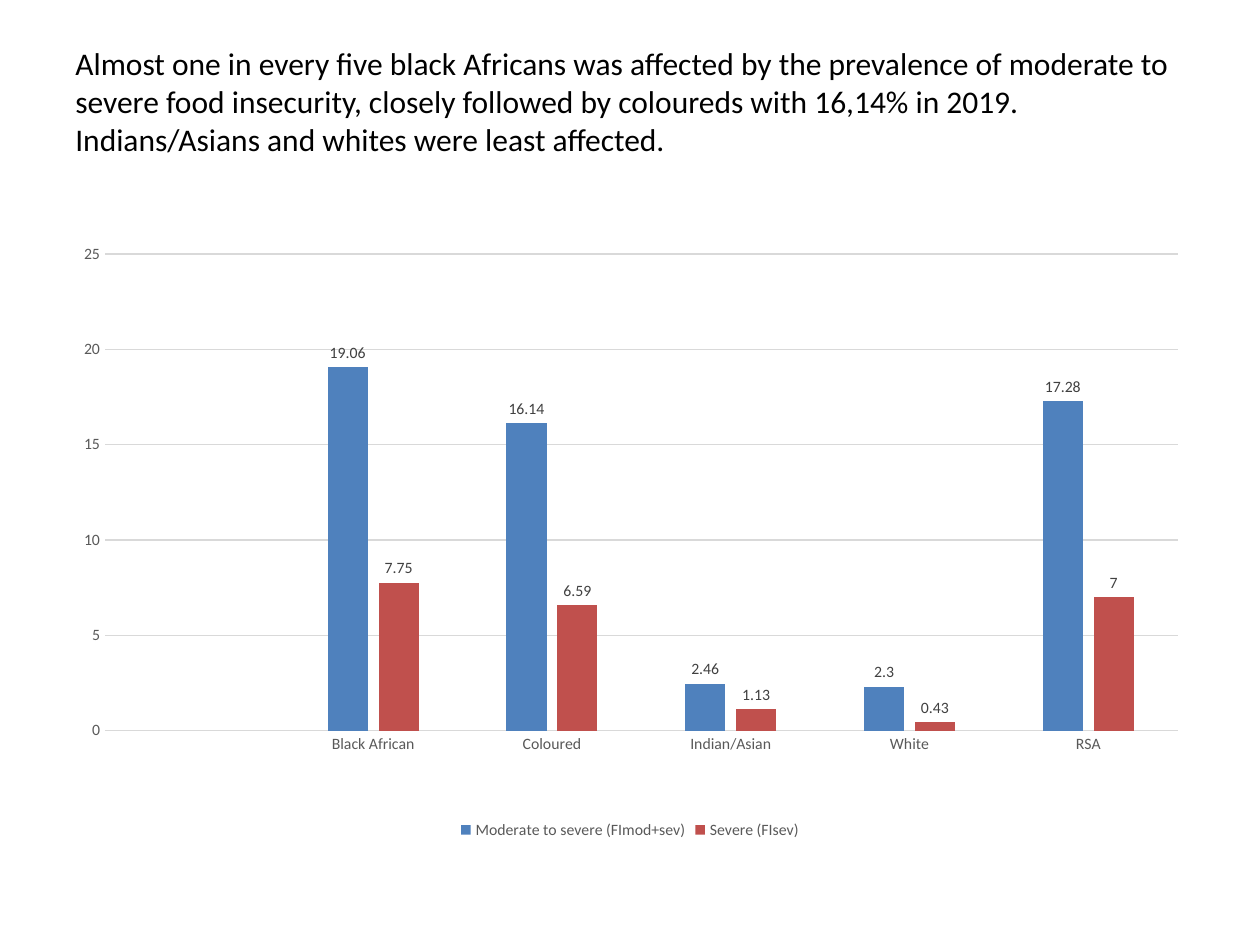
"""Build a slide charting food insecurity by population group."""

from dataclasses import dataclass

from lxml import etree
from pptx import Presentation
from pptx.chart.chart import Chart
from pptx.chart.data import CategoryChartData
from pptx.dml.color import RGBColor
from pptx.enum.chart import XL_CHART_TYPE, XL_LABEL_POSITION, XL_LEGEND_POSITION, XL_TICK_MARK
from pptx.enum.text import MSO_ANCHOR
from pptx.oxml.ns import qn
from pptx.slide import Slide
from pptx.text.text import Font
from pptx.util import Pt

CLUSTERED = XL_CHART_TYPE.COLUMN_CLUSTERED
OUTSIDE_END = XL_LABEL_POSITION.OUTSIDE_END
BOTTOM = XL_LEGEND_POSITION.BOTTOM
NO_TICK = XL_TICK_MARK.NONE
TOP = MSO_ANCHOR.TOP


@dataclass(frozen=True)
class Theme:
    """Colours, typeface and type sizes."""

    face: str = "Calibri"
    ink: str = "000000"
    axis_text: str = "595959"
    label_text: str = "404040"
    rule: str = "D9D9D9"
    title_size: float = 18
    chart_size: float = 10
    small_size: float = 9
    rule_width: float = 0.75


@dataclass(frozen=True)
class Area:
    """A rectangle in points."""

    left: float
    top: float
    width: float
    height: float


@dataclass(frozen=True)
class Measure:
    """One series of percentages."""

    name: str
    values: tuple[float | None, ...]
    colour: str


THEME = Theme()
TITLE_AREA = Area(36, 21.6, 648, 118)
CHART_AREA = Area(36, 126, 648, 356.4)
PLOT_LAYOUT = {"x": 0.037, "y": 0.054, "w": 0.946, "h": 0.764}
TITLE = (
    "Almost one in every five black Africans was affected by the prevalence of "
    "moderate to severe food insecurity, closely followed by coloureds with 16,14% "
    "in 2019. Indians/Asians and whites were least affected."
)
GROUPS = ("", "Black African", "Coloured", "Indian/Asian", "White", "RSA")
MEASURES = (
    Measure("Moderate to severe (FImod+sev)", (None, 19.06, 16.14, 2.46, 2.3, 17.28), "4F81BD"),
    Measure("Severe (FIsev)", (None, 7.75, 6.59, 1.13, 0.43, 7), "C0504D"),
)


def style_font(font: Font, size: float, colour: str) -> None:
    """Set the typeface, size and colour of a font."""
    font.name = THEME.face
    font.size = Pt(size)
    font.bold = False
    font.color.rgb = RGBColor.from_string(colour)


def add_title(page: Slide, area: Area, text: str) -> None:
    """Add the headline text."""
    box = page.shapes.add_textbox(Pt(area.left), Pt(area.top), Pt(area.width), Pt(area.height))
    box.text_frame.word_wrap = True
    box.text_frame.vertical_anchor = TOP
    span = box.text_frame.paragraphs[0].add_run()
    span.text = text
    style_font(span.font, THEME.title_size, THEME.ink)


def place_plot(chart: Chart, fractions: dict[str, float]) -> None:
    """Fix the inner plot area as fractions of the chart."""
    plot_area = chart.element.find(".//" + qn("c:plotArea"))
    for previous in plot_area.findall(qn("c:layout")):
        plot_area.remove(previous)
    layout = etree.Element(qn("c:layout"))
    manual = etree.SubElement(layout, qn("c:manualLayout"))
    settings = {"layoutTarget": "inner", "xMode": "edge", "yMode": "edge", **fractions}
    for tag, value in settings.items():
        etree.SubElement(manual, qn(f"c:{tag}")).set("val", str(value))
    plot_area.insert(0, layout)


def style_axes(chart: Chart) -> None:
    """Style both axes and the horizontal gridlines."""
    category, value = chart.category_axis, chart.value_axis
    for axis in (category, value):
        axis.major_tick_mark = axis.minor_tick_mark = NO_TICK
        style_font(axis.tick_labels.font, THEME.small_size, THEME.axis_text)
    value.minimum_scale, value.maximum_scale, value.major_unit = 0, 25, 5
    value.has_major_gridlines = True
    value.format.line.fill.background()
    for line in (category.format.line, value.major_gridlines.format.line):
        line.color.rgb = RGBColor.from_string(THEME.rule)
        line.width = Pt(THEME.rule_width)


def style_columns(chart: Chart, measures: tuple[Measure, ...]) -> None:
    """Colour the columns and show their values."""
    plot = chart.plots[0]
    plot.gap_width, plot.overlap = 219, -27
    plot.vary_by_categories = False
    for series, measure in zip(plot.series, measures):
        series.format.fill.solid()
        series.format.fill.fore_color.rgb = RGBColor.from_string(measure.colour)
        series.invert_if_negative = False
        labels = series.data_labels
        labels.show_value = True
        labels.position = OUTSIDE_END
        style_font(labels.font, THEME.small_size, THEME.label_text)


def add_column_chart(page: Slide, area: Area, measures: tuple[Measure, ...]) -> None:
    """Add the clustered column chart with its legend."""
    data = CategoryChartData()
    data.categories = GROUPS
    for measure in measures:
        data.add_series(measure.name, measure.values)
    chart = page.shapes.add_chart(
        CLUSTERED, Pt(area.left), Pt(area.top), Pt(area.width), Pt(area.height), data
    ).chart
    chart.has_title = False
    style_font(chart.font, THEME.chart_size, THEME.ink)
    chart.has_legend = True
    chart.legend.position = BOTTOM
    chart.legend.include_in_layout = False
    style_font(chart.legend.font, THEME.small_size, THEME.axis_text)
    style_axes(chart)
    style_columns(chart, measures)
    place_plot(chart, PLOT_LAYOUT)


def main() -> None:
    """Build and save the deck."""
    deck = Presentation()
    deck.slide_width, deck.slide_height = Pt(720), Pt(540)
    page = deck.slides.add_slide(deck.slide_layouts[6])
    add_title(page, TITLE_AREA, TITLE)
    add_column_chart(page, CHART_AREA, MEASURES)
    deck.save("out.pptx")


if __name__ == "__main__":
    main()
